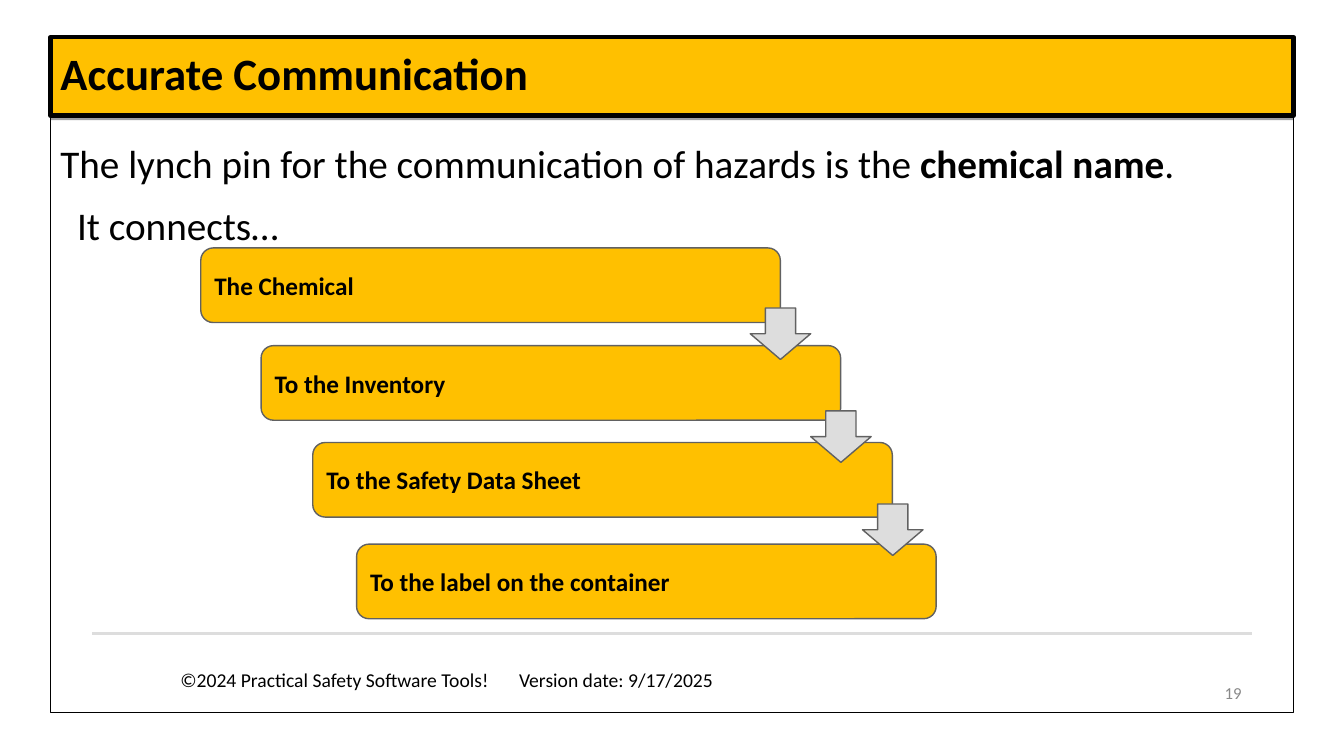
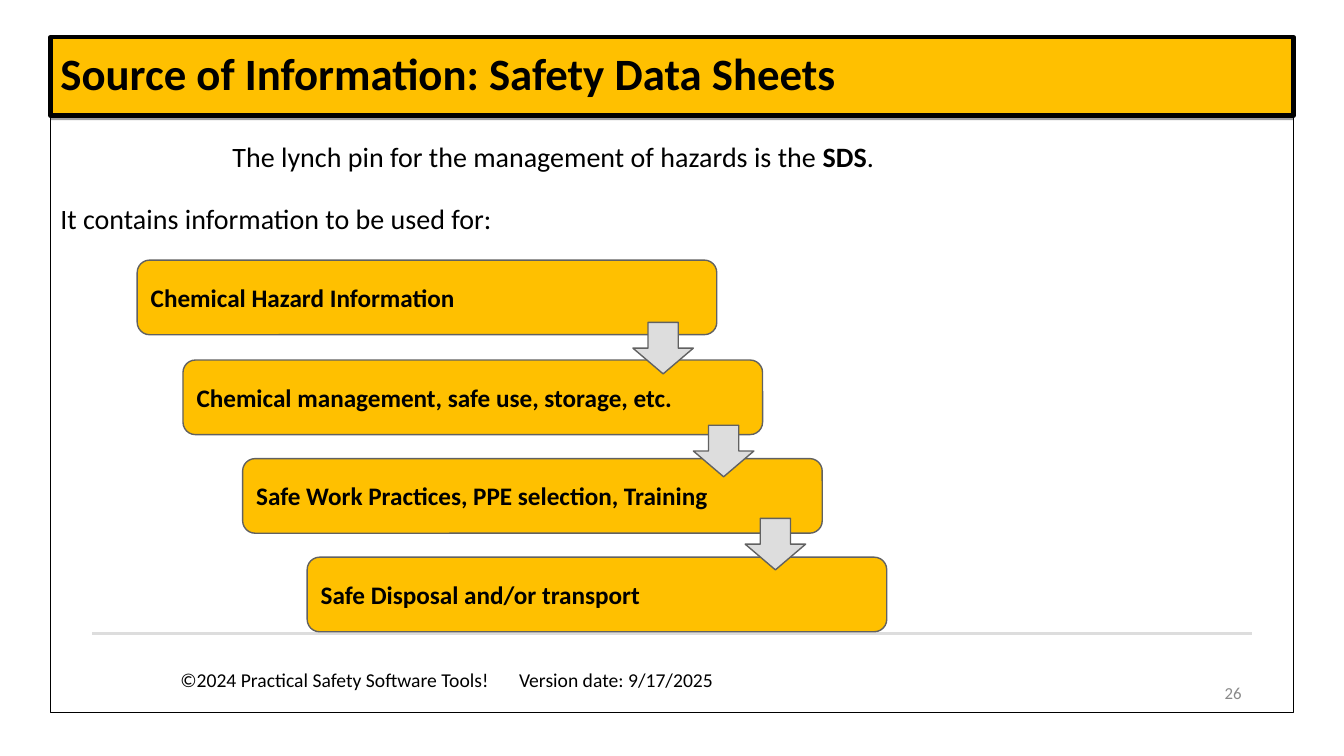
import pptx
import pptx.dml.color
import pptx.enum.shapes
import pptx.enum.text
import pptx.oxml.ns
import pptx.util
from lxml import etree

Pt = pptx.util.Pt
SHAPE = pptx.enum.shapes.MSO_SHAPE
ALIGN = pptx.enum.text.PP_ALIGN
MIDDLE = pptx.enum.text.MSO_ANCHOR.MIDDLE

FONT = "Calibri"
AMBER, BLACK, GREY = "FFC000", "000000", "DDDDDD"
OUTLINE, BAND, NUMBER = "616161", "9F9F9F", "898989"

FRAME_LEFT, FRAME_TOP, FRAME_WIDTH, FRAME_HEIGHT = 36, 26.6, 888, 482.4
TITLE_HEIGHT = 56
STEP_WIDTH, STEP_HEIGHT = 414, 53.3
ARROW_WIDTH, ARROW_HEIGHT = 43.2, 36.8
ARROW_OFFSETS = [(0, 0), (43.2, 73.5), (80.2, 140)]
FOOTER = "©2024 Practical Safety Software Tools!\tVersion date: 9/17/2025"
FOOTER_TAB = 242

SLIDES = [
    {
        "title": "Accurate Communication",
        "number": "19",
        "lead_size": 28,
        "leads": [
            (36, 95.8, 857, [("The lynch pin for the communication of hazards is the ", False),
                             ("chemical name", True), (".", False)]),
            (48, 140.4, 742, [("It connects…", False)]),
        ],
        "steps": [
            (143.4, 177.1, "The Chemical"),
            (186.5, 246.9, "To the Inventory"),
            (223.4, 316.1, "To the Safety Data Sheet"),
            (254.7, 388.7, "To the label on the container"),
        ],
        "arrows": (535.9, 220),
    },
    {
        "title": "Source of Information: Safety Data Sheets",
        "number": "26",
        "lead_size": 20,
        "leads": [
            (159, 95.8, 631, [("The lynch pin for the management of hazards is the ", False),
                              ("SDS", True), (".", False)]),
            (36, 140.4, 754, [("It contains information to be used for:", False)]),
        ],
        "steps": [
            (98, 185.8, "Chemical Hazard Information"),
            (130.7, 257.2, "Chemical management, safe use, storage, etc."),
            (173.3, 327.6, "Safe Work Practices, PPE selection, Training"),
            (219.4, 398, "Safe Disposal and/or transport"),
        ],
        "arrows": (452.1, 230.3),
    },
]


def color(value):
    return pptx.dml.color.RGBColor.from_string(value)


def style_span(span, size, tint=BLACK, bold=False):
    span.font.name = FONT
    span.font.size = Pt(size)
    span.font.bold = bold
    span.font.color.rgb = color(tint)


def paint(shape, fill=None, line=None, width=1):
    if fill:
        shape.fill.solid()
        shape.fill.fore_color.rgb = color(fill)
    else:
        shape.fill.background()
    if line:
        shape.line.color.rgb = color(line)
        shape.line.width = Pt(width)
    else:
        shape.line.fill.background()


def add_block(page, kind, left, top, width, height, fill=None, line=None, weight=1):
    block = page.shapes.add_shape(kind, Pt(left), Pt(top), Pt(width), Pt(height))
    block.shadow.inherit = False
    paint(block, fill, line, weight)
    return block


def add_text(page, left, top, width, height, spans, size, tint=BLACK):
    box = page.shapes.add_textbox(Pt(left), Pt(top), Pt(width), Pt(height))
    box.text_frame.word_wrap = True
    para = box.text_frame.paragraphs[0]
    for text, bold in spans:
        span = para.add_run()
        span.text = text
        style_span(span, size, tint, bold)
    return box


def add_rule(page, left, top, right):
    rule = page.shapes.add_connector(
        pptx.enum.shapes.MSO_CONNECTOR.STRAIGHT, Pt(left), Pt(top), Pt(right), Pt(top))
    rule.line.color.rgb = color(GREY)
    rule.line.width = Pt(2)
    etree.SubElement(rule.element.spPr, pptx.oxml.ns.qn("a:effectLst"))


def add_footer(page):
    box = add_text(page, 121.7, 473.8, 602, 24.2, [(FOOTER, False)], 14)
    properties = box.text_frame.paragraphs[0]._p.get_or_add_pPr()
    tabs = etree.SubElement(properties, pptx.oxml.ns.qn("a:tabLst"))
    etree.SubElement(tabs, pptx.oxml.ns.qn("a:tab"), pos=str(Pt(FOOTER_TAB)), algn="l")


def add_number(page, number):
    box = add_text(page, 678, 480, 216, 29, [(number, False)], 12, NUMBER)
    box.text_frame.vertical_anchor = MIDDLE
    box.text_frame.paragraphs[0].alignment = ALIGN.RIGHT


def set_title(page, text):
    title = page.shapes.title
    title.left, title.top = Pt(FRAME_LEFT), Pt(FRAME_TOP)
    title.width, title.height = Pt(FRAME_WIDTH), Pt(TITLE_HEIGHT)
    paint(title, AMBER, BLACK, 3)
    frame = title.text_frame
    frame.text = text
    frame.word_wrap = True
    frame.auto_size = pptx.enum.text.MSO_AUTO_SIZE.NONE
    frame.vertical_anchor = MIDDLE
    para = frame.paragraphs[0]
    para.alignment = ALIGN.LEFT
    para.line_spacing = 0.9
    style_span(para.runs[0], 32, bold=True)
    title.element.getparent().append(title.element)


def add_step(page, left, top, text):
    step = add_block(page, SHAPE.ROUNDED_RECTANGLE, left, top,
                     STEP_WIDTH, STEP_HEIGHT, AMBER, OUTLINE)
    step.text_frame.text = text
    step.text_frame.word_wrap = True
    step.text_frame.vertical_anchor = MIDDLE
    para = step.text_frame.paragraphs[0]
    para.alignment = ALIGN.LEFT
    style_span(para.runs[0], 18, bold=True)


def add_arrows(page, left, top):
    for across, down in ARROW_OFFSETS:
        add_block(page, SHAPE.DOWN_ARROW, left + across, top + down,
                  ARROW_WIDTH, ARROW_HEIGHT, GREY, OUTLINE)


def add_page(deck, content):
    page = deck.slides.add_slide(deck.slide_layouts.get_by_name("Title Only"))
    add_block(page, SHAPE.RECTANGLE, FRAME_LEFT, 82.3, FRAME_WIDTH, 3.6, BAND)
    add_rule(page, 66, 452.6, 894)
    add_block(page, SHAPE.RECTANGLE, FRAME_LEFT, FRAME_TOP, FRAME_WIDTH, FRAME_HEIGHT,
              line=BLACK, weight=0.75)
    add_footer(page)
    set_title(page, content["title"])
    add_number(page, content["number"])
    size = content["lead_size"]
    for left, top, width, spans in content["leads"]:
        add_text(page, left, top, width, size * 1.2 + 7.4, spans, size)
    for left, top, text in content["steps"]:
        add_step(page, left, top, text)
    add_arrows(page, *content["arrows"])


def main():
    deck = pptx.Presentation()
    deck.slide_width, deck.slide_height = Pt(960), Pt(540)
    for content in SLIDES:
        add_page(deck, content)
    deck.save("out.pptx")


if __name__ == "__main__":
    main()
